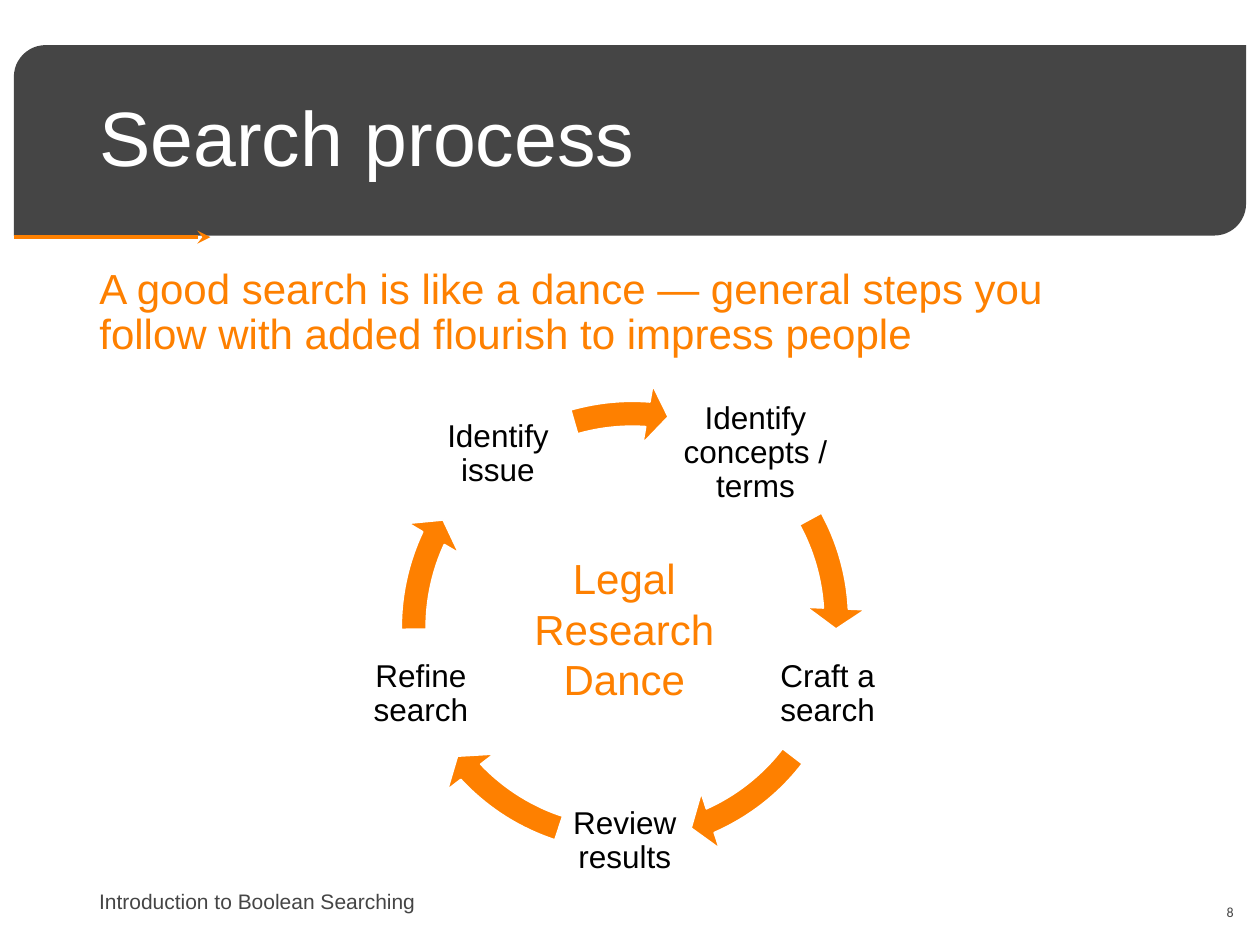
from lxml import etree
from pptx import Presentation
from pptx import util as u
from pptx.dml.color import RGBColor
from pptx.enum import shapes, text
from pptx.oxml.ns import qn

ORANGE, GREY, WHITE, BLACK = "FE8000", "454545", "FFFFFF", "000000"
MIDDLE, TOP = text.MSO_ANCHOR.MIDDLE, text.MSO_ANCHOR.TOP
LEFT, CENTER, RIGHT = text.PP_ALIGN.LEFT, text.PP_ALIGN.CENTER, text.PP_ALIGN.RIGHT


def colour(value):
    return RGBColor.from_string(value)


def place(part, box):
    part.left, part.top, part.width, part.height = map(u.Cm, box)


def write(part, words, size, ink, align=LEFT, anchor=MIDDLE, leading=1, font="Arial", inset=None):
    frame = part.text_frame
    frame.word_wrap = True
    frame.auto_size = text.MSO_AUTO_SIZE.NONE
    frame.vertical_anchor = anchor
    if inset is not None:
        frame.margin_left = frame.margin_right = u.Cm(inset)
        frame.margin_top = frame.margin_bottom = u.Cm(inset)
    paragraph = frame.paragraphs[0]
    paragraph.alignment = align
    paragraph.line_spacing = leading
    paragraph.space_before = u.Pt(0)
    run = paragraph.add_run()
    run.text = words
    run.font.name = font
    run.font.size = u.Pt(size)
    run.font.color.rgb = colour(ink)
    return paragraph


def label(parent, box, words, size, ink, **style):
    write(parent.add_textbox(*map(u.Cm, box)), words, size, ink, **style)


def header(slide, box, heading):
    left, top, width, height = box
    band = slide.shapes.add_shape(shapes.MSO_SHAPE.ROUND_2_DIAG_RECTANGLE, *map(u.Cm, box))
    band.shadow.inherit = False
    band.fill.solid()
    band.fill.fore_color.rgb = colour(GREY)
    band.line.fill.background()

    base = u.Cm(top + height + 0.03)
    pointer = slide.shapes.add_connector(
        shapes.MSO_CONNECTOR.STRAIGHT, u.Cm(left), base, u.Cm(left + 3.96), base)
    pointer.line.color.rgb = colour(ORANGE)
    pointer.line.width = u.Pt(2.5)
    etree.SubElement(pointer.line._get_or_add_ln(), qn("a:tailEnd"), type="stealth")
    etree.SubElement(pointer._element.spPr, qn("a:effectLst"))

    tree = slide.shapes._spTree
    tree.insert(2, band._element)
    tree.insert(3, pointer._element)

    title = slide.shapes.title
    place(title, (left + 1.47, top + 0.11, 21.89, 3.68))
    write(title, heading, 44, WHITE, leading=0.9)


def introduction(slide, box, sentence):
    body = slide.placeholders[1]
    place(body, box)
    properties = body.text_frame.paragraphs[0]._p.get_or_add_pPr()
    properties.set("marL", "0")
    properties.set("indent", "0")
    etree.SubElement(properties, qn("a:buNone"))
    write(body, sentence, 24, ORANGE, anchor=TOP, leading=0.9)


def cycle(slide, box, steps, theme):
    left, top, _, _ = box
    diameter = 9.7
    ring = slide.shapes.add_group_shape().shapes
    for words, (x, y, width), (arrow_x, arrow_y), (end, start) in steps:
        label(ring, (left + x, top + y, width, 2.59), words, 18, BLACK,
              align=CENTER, leading=0.9, inset=0.08)
        arrow = ring.add_shape(
            shapes.MSO_SHAPE.CIRCULAR_ARROW,
            *map(u.Cm, (left + arrow_x, top + arrow_y, diameter, diameter)))
        for index, value in enumerate((0.052, 3.355, end, start, 0.061)):
            arrow.adjustments[index] = value
        arrow.shadow.inherit = False
        arrow.fill.solid()
        arrow.fill.fore_color.rgb = colour(ORANGE)
        arrow.line.color.rgb = colour(WHITE)
        arrow.line.width = u.Pt(1)
    label(slide.shapes, (left + 2.31, top + 3.37, 6.17, 3.33), theme, 24, ORANGE,
          align=CENTER, anchor=TOP)


def footer(slide, box, topic, number):
    left, top, width, height = box
    number_width = 5.72
    label(slide.shapes, (left + width - number_width, top + 0.23, number_width, height),
          number, 8, GREY, align=RIGHT, font="Calibri")
    label(slide.shapes, (left, top, 8.41, height), topic, 12, GREY)


def main():
    deck = Presentation()
    deck.slide_width, deck.slide_height = u.Cm(25.4), u.Cm(19.05)
    slide = deck.slides.add_slide(deck.slide_layouts[1])

    header(slide, (0.28, 0.91, 24.84, 3.84), "Search process")
    introduction(slide, (1.75, 5.28, 21.89, 2.34),
                 "A good search is like a dance — general steps you follow "
                 "with added flourish to impress people")
    steps = [
        ("Identify concepts / terms", (6.3, 0.2, 3.48), (0.56, 0), (214.12, 198.85)),
        ("Craft a search", (8.2, 5.05, 2.59), (0.56, 0.15), (39.7, 22.52)),
        ("Review results", (4.06, 8.02, 2.69), (0.56, 0.15), (82.13, 64.95)),
        ("Refine search", (0, 5.05, 2.59), (0.56, 0.15), (123, 107.7)),
        ("Identify issue", (1.34, 0.22, 3.02), (0.71, 0.1), (164.5, 152.4)),
    ]
    cycle(slide, (7.19, 7.65, 10.8, 10.6), steps, "Legal Research Dance")
    footer(slide, (1.75, 17.65, 23.37, 1.02), "Introduction to Boolean Searching", "8")

    deck.save("out.pptx")


if __name__ == "__main__":
    main()
